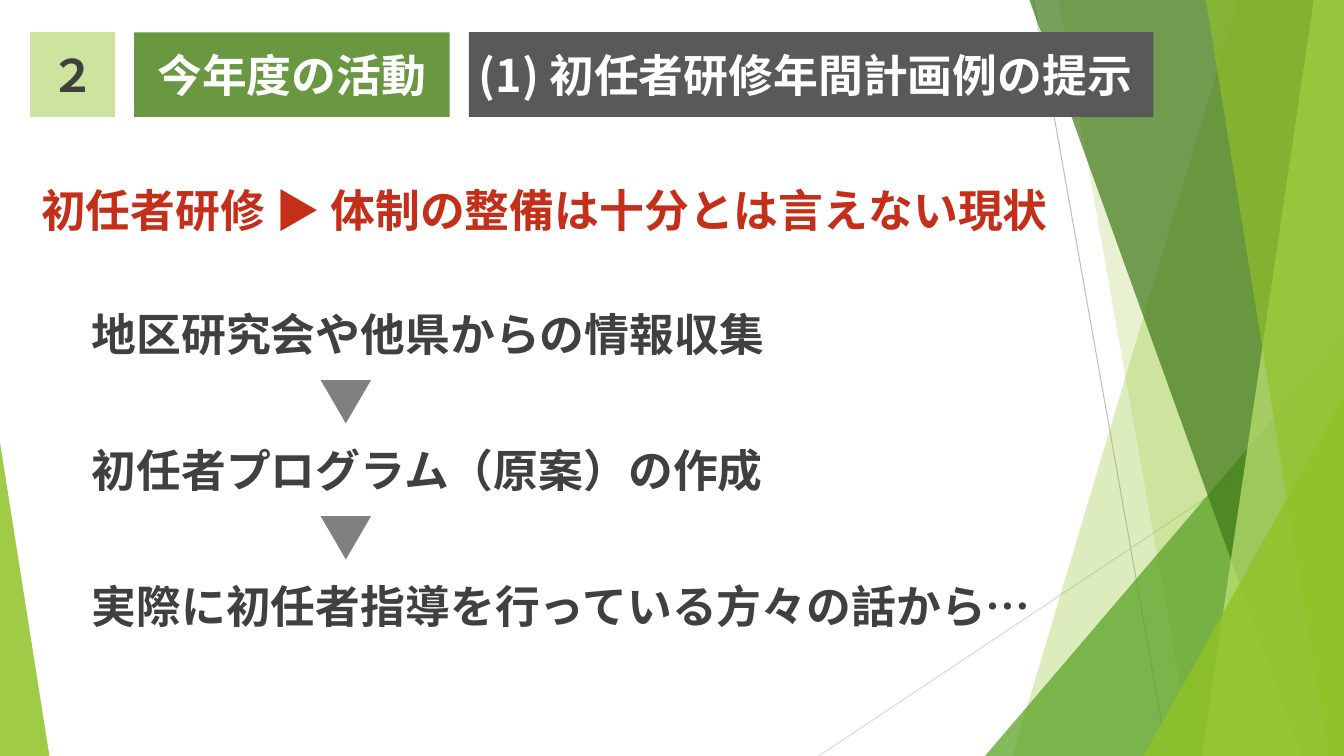
from dataclasses import dataclass

from lxml.etree import SubElement
from pptx import Presentation
from pptx.dml.color import RGBColor
from pptx.enum.shapes import MSO_CONNECTOR, MSO_SHAPE
from pptx.enum.text import MSO_ANCHOR, MSO_AUTO_SIZE, PP_ALIGN
from pptx.oxml.ns import qn
from pptx.util import Inches, Pt

FONT = "Noto Sans CJK JP"
WIDTH, HEIGHT = 13.33, 7.5
HEADING_TOP, HEADING_HEIGHT = 0.32, 0.84
STEP_TOP, STEP_PITCH = 2.99, 1.35
DARK, WHITE = "404040", "FFFFFF"


@dataclass
class Ray:
    start: tuple[float, float]
    end: tuple[float, float]
    color: str


@dataclass
class Band:
    """A facet from a slanted left edge to the right side of the slide."""
    top_x: float
    bottom_x: float
    color: str
    opacity: int


@dataclass
class Corner:
    """A triangle standing on the slide's bottom edge."""
    left: float
    top: float
    width: float
    apex: float
    color: str
    opacity: int


@dataclass
class Heading:
    text: str
    left: float
    width: float
    fill: str
    color: str
    align: PP_ALIGN


RAYS = [
    Ray((10.25, 0), (11.58, HEIGHT), "BFBFBF"),
    Ray((WIDTH, 4.03), (8.12, HEIGHT), "D9D9D9"),
]
FACETS = [
    Band(12.28, 10.04, "90C226", 30),
    Band(10.5, 11.83, "90C226", 20),
    Corner(9.77, 3.33, 3.56, 1, "54A021", 72),
    Band(10.21, 12.91, "3F7819", 70),
    Band(13.03, 11.92, "C0E474", 70),
    Band(11.96, 13.18, "90C226", 65),
    Corner(11.34, 3.93, 1.99, 1, "90C226", 80),
    Corner(0, 4.39, 0.49, 0, "90C226", 85),
]
SECTION = Heading("今年度の活動", 1.33, 3.13, "699841", WHITE, PP_ALIGN.CENTER)
HEADINGS = [
    Heading("２", 0.3, 0.84, "CDE49F", DARK, PP_ALIGN.CENTER),
    Heading("(1) 初任者研修年間計画例の提示", 4.65, 6.79, "595959", WHITE, PP_ALIGN.LEFT),
]
ISSUE = "初任者研修 ▶ 体制の整備は十分とは言えない現状"
STEPS = [
    "地区研究会や他県からの情報収集",
    "初任者プログラム（原案）の作成",
    "実際に初任者指導を行っている方々の話から…",
]


def rgb(color: str) -> RGBColor:
    return RGBColor.from_string(color)


def paint(shape, color: str, opacity: int = 100) -> None:
    shape.fill.solid()
    shape.fill.fore_color.rgb = rgb(color)
    if opacity < 100:
        tint = shape.fill._xPr.find(f"{qn('a:solidFill')}/{qn('a:srgbClr')}")
        SubElement(tint, qn("a:alpha"), val=str(opacity * 1000))
    shape.line.fill.background()
    shape.shadow.inherit = False


def write(shape, text: str, color: str, align: PP_ALIGN = PP_ALIGN.LEFT) -> None:
    frame = shape.text_frame
    frame.word_wrap = True
    frame.text = text
    paragraph = frame.paragraphs[0]
    paragraph.alignment = align
    font = paragraph.font
    font.size, font.bold, font.name = Pt(32), True, FONT
    font.color.rgb = rgb(color)
    SubElement(font._element, qn("a:ea"), typeface=FONT)


def draw_ray(shapes, ray: Ray) -> None:
    x1, y1, x2, y2 = (Inches(value) for value in ray.start + ray.end)
    line = shapes.add_connector(MSO_CONNECTOR.STRAIGHT, x1, y1, x2, y2)
    line.line.color.rgb = rgb(ray.color)
    line.line.width = Pt(0.75)
    SubElement(line._element.spPr, qn("a:effectLst"))


def draw_facet(shapes, facet: Band | Corner) -> None:
    if isinstance(facet, Band):
        builder = shapes.build_freeform(Inches(facet.top_x), 0)
        outline = [(WIDTH, 0), (WIDTH, HEIGHT), (facet.bottom_x, HEIGHT)]
        builder.add_line_segments([(Inches(x), Inches(y)) for x, y in outline])
        shape = builder.convert_to_shape()
    else:
        shape = shapes.add_shape(
            MSO_SHAPE.ISOSCELES_TRIANGLE, Inches(facet.left), Inches(facet.top),
            Inches(facet.width), Inches(HEIGHT - facet.top))
        shape.adjustments[0] = facet.apex
    paint(shape, facet.color, facet.opacity)


def format_heading(shape, heading: Heading) -> None:
    shape.left, shape.top = Inches(heading.left), Inches(HEADING_TOP)
    shape.width, shape.height = Inches(heading.width), Inches(HEADING_HEIGHT)
    paint(shape, heading.fill)
    shape.text_frame.vertical_anchor = MSO_ANCHOR.MIDDLE
    shape.text_frame.auto_size = MSO_AUTO_SIZE.NONE
    write(shape, heading.text, heading.color, heading.align)


def draw_statement(shapes, text: str, left: float, top: float, width: float, color: str) -> None:
    box = shapes.add_textbox(Inches(left), Inches(top), Inches(width), Inches(0.64))
    box.text_frame.auto_size = MSO_AUTO_SIZE.SHAPE_TO_FIT_TEXT
    write(box, text, color)


def draw_down_marker(shapes, top: float) -> None:
    marker = shapes.add_shape(
        MSO_SHAPE.ISOSCELES_TRIANGLE, Inches(3.18), Inches(top), Inches(0.5), Inches(0.43))
    marker.rotation = 180
    paint(marker, "808080")


def main() -> None:
    deck = Presentation()
    deck.slide_width, deck.slide_height = Inches(WIDTH), Inches(HEIGHT)
    shapes = deck.slides.add_slide(deck.slide_layouts[5]).shapes

    for ray in RAYS:
        draw_ray(shapes, ray)
    for facet in FACETS:
        draw_facet(shapes, facet)

    format_heading(shapes.title, SECTION)
    for heading in HEADINGS:
        format_heading(shapes.add_shape(MSO_SHAPE.RECTANGLE, 0, 0, 0, 0), heading)

    draw_statement(shapes, ISSUE, 0.31, 1.76, 11.15, "C42F1A")
    for index, step in enumerate(STEPS):
        top = STEP_TOP + index * STEP_PITCH
        draw_statement(shapes, step, 0.81, top, 10.15, DARK)
        if index < len(STEPS) - 1:
            draw_down_marker(shapes, top + 0.78)

    deck.save("out.pptx")


if __name__ == "__main__":
    main()
